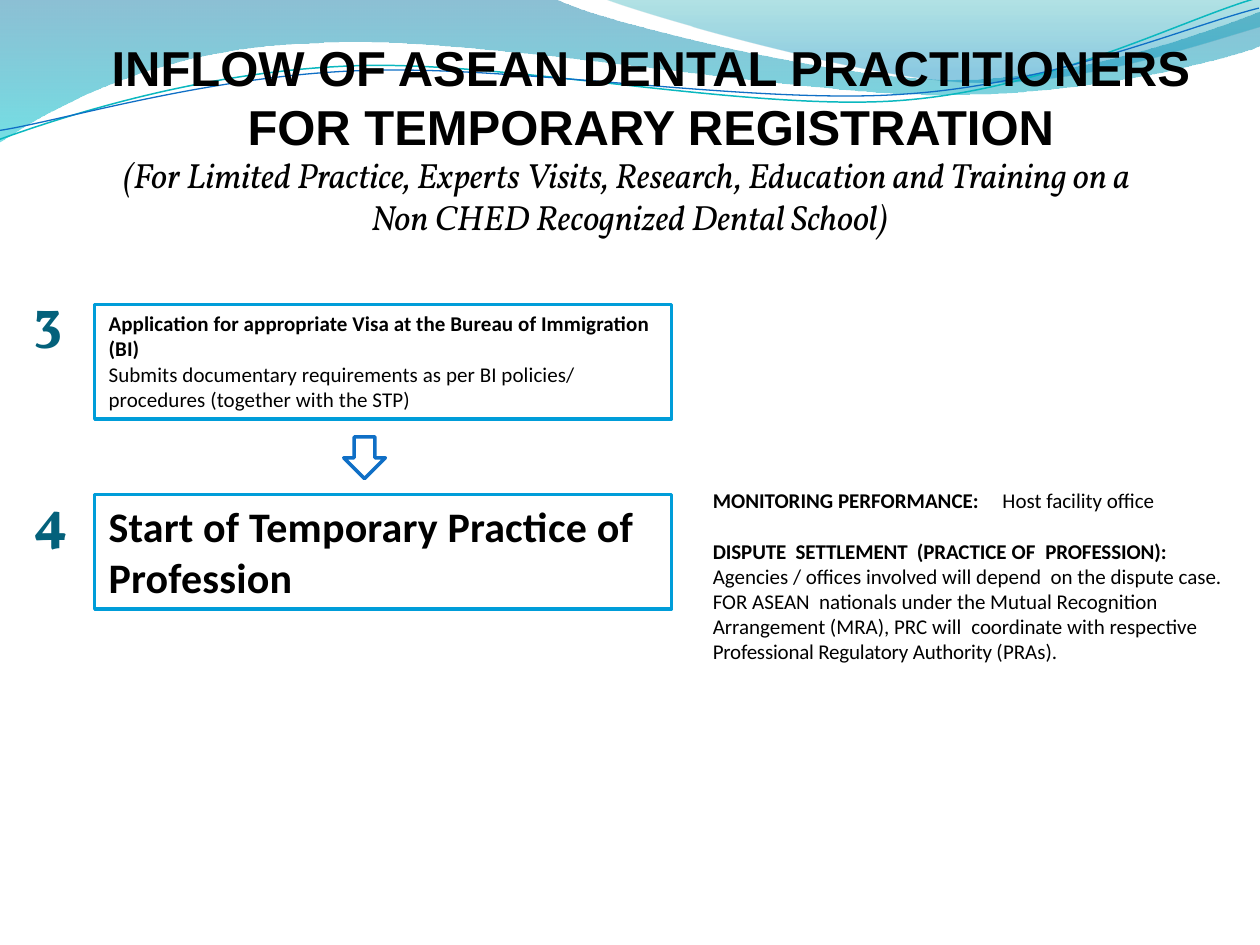
from itertools import chain

from lxml import etree
from pptx import Presentation
from pptx.dml.color import RGBColor
from pptx.enum.shapes import MSO_SHAPE
from pptx.enum.text import MSO_ANCHOR, PP_ALIGN
from pptx.oxml.ns import qn
from pptx.util import Cm, Emu, Pt

RECTANGLE, DOWN_ARROW = MSO_SHAPE.RECTANGLE, MSO_SHAPE.DOWN_ARROW
LEFT, CENTER, TOP = PP_ALIGN.LEFT, PP_ALIGN.CENTER, MSO_ANCHOR.TOP
BLACK, WHITE, TEAL, BLUE, SKY = "000000", "FFFFFF", "04617B", "0F6FC6", "009DD9"
UNITS = 1000

LEFT_WAVE = [
    [(0, 0)], [(4.4, -0.01)],
    [(4.76, 0.17), (6.64, 0.63), (7.58, 0.63)],
    [(8.53, 0.63), (9.58, 0.26), (10, 0.09)],
    [(10.01, 0.36)],
    [(9.83, 0.44), (8.7, 0.76), (7.46, 0.75)],
    [(6.22, 0.75), (3.82, 0.28), (2.57, 0.34)],
    [(1.29, 0.36), (0.46, 0.83), (-0.01, 1.13)],
    [(0, 0)],
]
RIGHT_WAVE = [
    [(4.79, -0.01)],
    [(5.09, 0.11), (6.82, 0.62), (7.69, 0.65)],
    [(8.56, 0.69), (9.61, 0.32), (10, 0.21)],
    [(10, 0)], [(4.79, -0.01)],
]
TEAL_STRAND = [
    [(-0.02, 0.87)],
    [(0.47, 0.72), (1.58, 0.41), (2.78, 0.42)],
    [(3.96, 0.42), (5.91, 0.93), (7.12, 0.9)],
    [(8.32, 0.87), (9.4, 0.36), (10, 0.22)],
]
BLUE_STRAND = [
    [(-0.02, 0.8)],
    [(0.46, 0.75), (1.64, 0.45), (2.83, 0.46)],
    [(4.03, 0.46), (5.96, 0.88), (7.16, 0.85)],
    [(8.35, 0.83), (9.42, 0.42), (10.01, 0.3)],
]


def color(value):
    """Turn a hex string into a colour."""
    return RGBColor.from_string(value)


def add_curve(slide, left, top, width, segments, close):
    """Draw straight and cubic segments on a box ten units wide."""
    start, *others = [(x * UNITS, y * UNITS) for x, y in chain(*segments)]
    builder = slide.shapes.build_freeform(*start, scale=width / (10 * UNITS))
    builder.add_line_segments(others, close=close)
    curve = builder.convert_to_shape(left, top)
    curve.shadow.inherit = False
    sides = iter(list(curve._element.iter(qn("a:lnTo"))))
    for segment in segments[1:]:
        first, *rest = [next(sides) for _ in segment]
        if rest:
            bend = etree.Element(qn("a:cubicBezTo"))
            first.addprevious(bend)
            for side in (first, *rest):
                bend.append(side[0])
                side.getparent().remove(side)
    return curve


def add_waves(slide, left, top, width):
    """Draw the translucent waves and thin strands of the header."""
    waves = (
        (LEFT_WAVE, ((0, "0074A1", 45), (1, "00C6CF", 55))),
        (RIGHT_WAVE, ((0, "00A1A9", 30), (0.8, "008BBF", 45))),
    )
    for segments, stops in waves:
        wave = add_curve(slide, left, top, width, segments, True)
        wave.line.fill.background()
        wave.fill.gradient()
        wave.fill.gradient_angle = 270
        for stop, (position, tint, _) in zip(wave.fill.gradient_stops, stops):
            stop.position = position
            stop.color.rgb = color(tint)
        tints = wave._element.spPr.iter(qn("a:srgbClr"))
        for element, (_, _, opacity) in zip(tints, stops):
            etree.SubElement(element, qn("a:alpha"), val=str(opacity * 1000))
    for segments, tint, weight in ((TEAL_STRAND, "0AB8BF", 0.85), (BLUE_STRAND, BLUE, 0.75)):
        strand = add_curve(slide, left, top, width, segments, False)
        strand.rotation = 357.3
        strand.fill.background()
        strand.line.color.rgb = color(tint)
        strand.line.width = Pt(weight)


def write(frame, paragraphs, font, size, tint=BLACK, align=LEFT, italic=False):
    """Fill a frame with paragraphs of (text, bold, letter spacing) runs."""
    frame.word_wrap = True
    for index, pieces in enumerate(paragraphs):
        paragraph = frame.add_paragraph() if index else frame.paragraphs[0]
        paragraph.alignment = align
        for text, bold, spacing in pieces:
            run = paragraph.add_run()
            run.text = text
            run.font.name, run.font.size = font, Pt(size)
            run.font.bold, run.font.italic = bold, italic
            run.font.color.rgb = color(tint)
            if spacing:
                run._r.get_or_add_rPr().set("spc", str(spacing))


def add_outlined(slide, preset, box, tint):
    """Draw a white preset shape with a coloured outline."""
    shape = slide.shapes.add_shape(preset, *box)
    shape.shadow.inherit = False
    shape.fill.solid()
    shape.fill.fore_color.rgb = color(WHITE)
    shape.line.color.rgb = color(tint)
    shape.line.width = Pt(2)
    return shape


def add_heading(slide, left, top, width):
    """Place the title and the scope below it."""
    title = slide.shapes.add_textbox(left + Cm(0.84), top, width - Cm(0.84), Cm(2.64))
    write(title.text_frame,
          [[("INFLOW OF ASEAN DENTAL PRACTITIONERS FOR TEMPORARY REGISTRATION", True, 0)]],
          "Arial", 28, align=CENTER)
    scope = slide.shapes.add_textbox(left, top + Cm(1.47), width, Cm(1.96))
    scope.text_frame.margin_top = Cm(0.98)
    scope.text_frame.margin_bottom = 0
    write(scope.text_frame,
          [[("(For Limited Practice, Experts Visits, Research, Education and Training on a ",
             False, 0)],
           [("Non CHED Recognized Dental School)", False, 0)]],
          "Vollkorn", 20, align=CENTER, italic=True)


def add_step(slide, left, top, width, height, number, rise, paragraphs, size):
    """Place one numbered step, its number raised above the box top."""
    step = add_outlined(slide, RECTANGLE, (left + Cm(1.48), top, width - Cm(1.48), height), SKY)
    step.text_frame.vertical_anchor = TOP
    step.text_frame.margin_left = Cm(0.28)
    write(step.text_frame, paragraphs, "Calibri", size)
    label = slide.shapes.add_textbox(left, top - rise, Cm(0.84), Cm(1.63))
    write(label.text_frame, [[(number, True, 0)]], "Vollkorn", 32, TEAL)


def add_steps(slide, left, top, width):
    """Stack the two steps with an arrow between them."""
    height, pitch, arrow = Cm(2.31), Cm(3.83), Cm(0.84)
    visa = [
        [("Application for appropriate Visa at the Bureau of Immigration (BI)", True, 5)],
        [("Submits documentary requirements as per BI policies/ procedures "
          "(together with the STP)", False, 5)],
    ]
    practice = [[("Start of Temporary Practice of Profession", True, 10)]]
    add_step(slide, left, top, width, height, "3", Cm(0.55), visa, 12)
    add_step(slide, left, top + pitch, width, height, "4", Cm(0.32), practice, 24)
    gap_top = top + height + Emu((pitch - height - arrow) // 2)
    add_outlined(slide, DOWN_ARROW, (left + Cm(6.5), gap_top + Cm(0.02), arrow, arrow), BLUE)


def add_oversight(slide, left, top, width, height):
    """Place the notes on monitoring and dispute settlement."""
    oversight = slide.shapes.add_textbox(left, top, width, height).text_frame
    oversight.margin_left = Cm(0.28)
    write(oversight, [
        [("MONITORING PERFORMANCE:\t", True, 0), ("Host facility office", False, 0)],
        [("DISPUTE  SETTLEMENT  (PRACTICE ", True, -5), ("OF  ", True, 5),
         ("PROFESSION):", True, -5)],
        [("Agencies / offices involved will depend  on the dispute case. FOR ASEAN  nationals "
          "under the Mutual Recognition Arrangement (MRA), PRC will  ", False, 0),
         ("coordinate ", False, -5), ("with respective", False, 0),
         (" Professional Regulatory Authority (", False, -10), ("PRAs).", False, 0)],
    ], "Calibri", 12)
    monitoring, dispute, _ = oversight.paragraphs
    dispute.space_before = Pt(14.65)
    tabs = etree.SubElement(monitoring._p.get_or_add_pPr(), qn("a:tabLst"))
    etree.SubElement(tabs, qn("a:tab"), pos=str(Cm(5.84)), algn="l")


def main():
    """Build the slide and save it."""
    deck = Presentation()
    deck.slide_width, deck.slide_height = Cm(25.4), Cm(19.05)
    slide = deck.slides.add_slide(deck.slide_layouts[6])
    add_waves(slide, 0, 0, deck.slide_width)
    add_heading(slide, 0, Cm(0.64), deck.slide_width)
    add_steps(slide, Cm(0.43), Cm(6.14), Cm(13.11))
    add_oversight(slide, Cm(14.09), Cm(9.7), Cm(11.23), Cm(3.84))
    deck.save("out.pptx")


if __name__ == "__main__":
    main()
